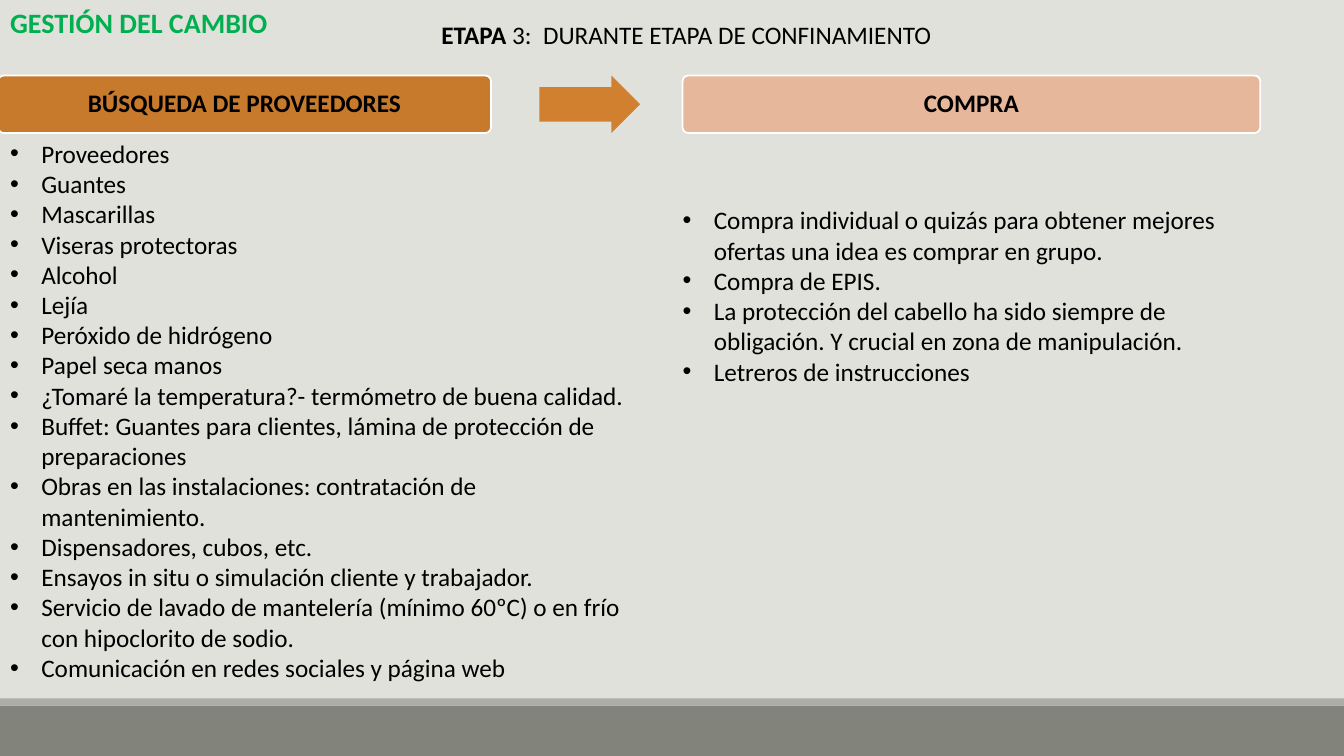
from pptx import Presentation
from pptx.dml.color import RGBColor
from pptx.enum.shapes import MSO_SHAPE as Shape
from pptx.enum.text import MSO_ANCHOR as Anchor, MSO_AUTO_SIZE as Fit, PP_ALIGN as Align
from pptx.oxml.ns import qn
from pptx.util import Inches, Pt
from lxml.etree import SubElement


def tint(code):
    return RGBColor.from_string(code)


def write(para, text, size=18, color="000000", bold=False, align=Align.LEFT,
          lines=1.0, bullet=False):
    run = para.add_run()
    run.text = text
    run.font.name = "Calibri"
    run.font.size = Pt(size)
    run.font.bold = bold
    run.font.color.rgb = tint(color)
    para.alignment = align
    para.line_spacing = lines
    para.space_before = para.space_after = Pt(0)
    if bullet:
        props = para._p.get_or_add_pPr()
        props.set("marL", str(Inches(0.31)))
        props.set("indent", str(-Inches(0.31)))
        SubElement(props, qn("a:buFont")).set("typeface", "Arial")
        SubElement(props, qn("a:buChar")).set("char", "•")


deck = Presentation()
deck.slide_width = Inches(13.33)
deck.slide_height = Inches(7.5)
slide = deck.slides.add_slide(deck.slide_layouts[3])
slide.background.fill.solid()
slide.background.fill.fore_color.rgb = tint("E1E1DB")
shapes = slide.shapes

# Footer bands, column headers and the arrow between them
blocks = [
    (Shape.RECTANGLE, 0, 7, 13.33, 0.5, "82847C", [], ""),
    (Shape.RECTANGLE, 0, 6.93, 13.33, 0.07, "ACADA8", [], ""),
    (Shape.ROUNDED_RECTANGLE, -0.02, 0.75, 4.89, 0.57, "C77A2C", [0.1],
     "BÚSQUEDA DE PROVEEDORES"),
    (Shape.RIGHT_ARROW, 5.35, 0.75, 1, 0.57, "D1802F", [0.6, 0.5], ""),
    (Shape.ROUNDED_RECTANGLE, 6.77, 0.75, 5.73, 0.57, "E6B79B", [0.1], "COMPRA"),
]
for kind, left, top, width, height, color, bends, label in blocks:
    block = shapes.add_shape(kind, Inches(left), Inches(top), Inches(width), Inches(height))
    block.shadow.inherit = False
    block.fill.solid()
    block.fill.fore_color.rgb = tint(color)
    block.line.fill.background()
    for i, bend in enumerate(bends):
        block.adjustments[i] = bend
    if label:
        block.line.color.rgb = tint("FFFFFF")
        block.line.width = Pt(1.25)
        frame = block.text_frame
        frame.vertical_anchor = Anchor.MIDDLE
        frame.margin_left = frame.margin_right = Inches(0.07)
        frame.margin_top = frame.margin_bottom = Inches(0.07)
        write(frame.paragraphs[0], label, bold=True, align=Align.CENTER, lines=0.9)

# Title and the two lists
goods = [
    "Proveedores",
    "Guantes",
    "Mascarillas",
    "Viseras protectoras",
    "Alcohol",
    "Lejía",
    "Peróxido de hidrógeno",
    "Papel seca manos",
    "¿Tomaré la temperatura?- termómetro de buena calidad.",
    "Buffet: Guantes para clientes, lámina de protección de preparaciones",
    "Obras en las instalaciones: contratación de mantenimiento.",
    "Dispensadores, cubos, etc.",
    "Ensayos in situ o simulación cliente y trabajador.",
    "Servicio de lavado de mantelería (mínimo 60ºC) o en frío con hipoclorito de sodio.",
    "Comunicación en redes sociales y página web",
]
orders = [
    "Compra individual o quizás para obtener mejores ofertas una idea es comprar en grupo.",
    "Compra de EPIS.",
    "La protección del cabello ha sido siempre de obligación. Y crucial en zona de manipulación.",
    "Letreros de instrucciones",
]
bodies = [
    (0, 0, 0, 5.48, 0.44, ["GESTIÓN DEL CAMBIO"], dict(size=20, color="00B050", bold=True)),
    (1, 0, 1.32, 6.47, 6.18, goods, dict(bullet=True)),
    (2, 6.67, 1.98, 5.9, 3.13, orders, dict(bullet=True)),
]
for key, left, top, width, height, items, style in bodies:
    body = slide.placeholders[key]
    body.left, body.top = Inches(left), Inches(top)
    body.width, body.height = Inches(width), Inches(height)
    frame = body.text_frame
    frame.word_wrap = True
    frame.auto_size = Fit.NONE
    frame.vertical_anchor = Anchor.TOP
    for i, item in enumerate(items):
        para = frame.add_paragraph() if i else frame.paragraphs[0]
        write(para, item, **style)

# Stage heading
stage = shapes.add_textbox(Inches(4.28), Inches(0.14), Inches(8.65), Inches(0.4))
stage.text_frame.word_wrap = True
para = stage.text_frame.paragraphs[0]
write(para, "ETAPA", bold=True)
write(para, " 3:  DURANTE ETAPA DE CONFINAMIENTO")

deck.save("out.pptx")
